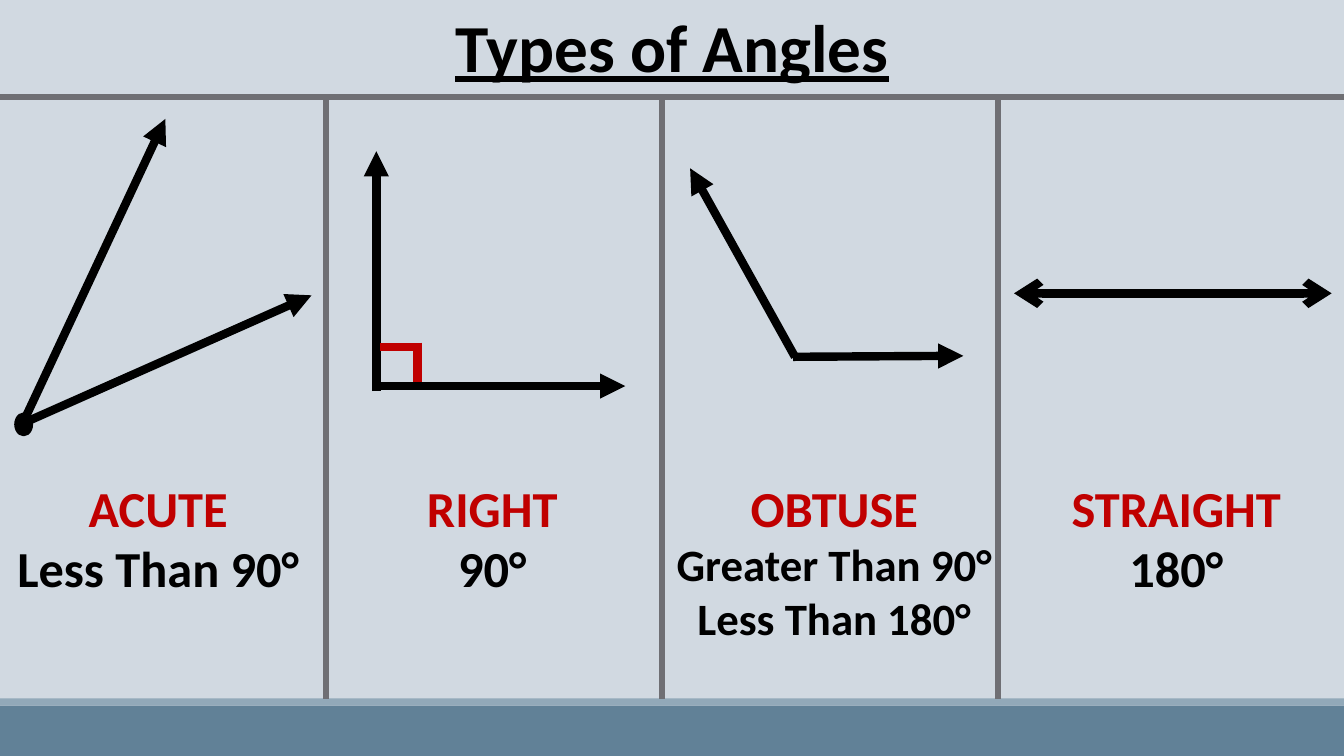
from lxml import etree
from pptx import Presentation
from pptx.dml.color import RGBColor
from pptx.enum.shapes import MSO_CONNECTOR, MSO_SHAPE
from pptx.enum.text import PP_ALIGN
from pptx.oxml.ns import qn
from pptx.util import Inches, Pt

RECT, OVAL = MSO_SHAPE.RECTANGLE, MSO_SHAPE.OVAL
STRAIGHT = MSO_CONNECTOR.STRAIGHT
CENTER = PP_ALIGN.CENTER

BACKGROUND = RGBColor(0xD1, 0xD9, 0xE1)
FOOTER = RGBColor(0x61, 0x81, 0x97)
FOOTER_EDGE = RGBColor(0x92, 0xA9, 0xB9)
GRAY = RGBColor(0x6F, 0x6F, 0x74)
BLACK = RGBColor(0, 0, 0)
RED = RGBColor(0xC0, 0, 0)

FONT = "Calibri"
W, H = 13.33, 7.5
HEADER_Y, EDGE_Y, FOOTER_Y = 0.96, 6.93, 7.0
CAPTION_Y = 4.68
# Left edge of each column: quarters of the slide, nudged left
COLUMNS = [0] + [W * i / 4 - 0.1 for i in (1, 2, 3)]

# Per column: caption centre and width, name, size in degrees, its font size
CAPTIONS = [
    (1.57, 3.04, 1.31, "ACUTE", "Less Than 90°", 36),
    (1.65, 1.81, 1.31, "RIGHT", "90°", 36),
    (1.71, 3.66, 1.78, "OBTUSE", "Greater Than 90° Less Than 180°", 32),
    (1.77, 2.57, 1.31, "STRAIGHT", "180°", 36),
]
# Column, start and end measured from the column's left edge
RAYS = [
    (0, (0.23, 4.19), (1.64, 1.18)),
    (0, (0.25, 4.19), (3.09, 2.93)),
    (1, (0.5, 3.83), (2.97, 3.83)),
    (1, (0.5, 3.88), (0.5, 1.5)),
    (2, (1.32, 3.54), (0.28, 1.67)),
    (2, (1.3, 3.54), (2.99, 3.53)),
]
RIGHT_ANGLE_MARK = [
    (1, (0.54, 3.44), (0.95, 3.44)),
    (1, (0.91, 3.4), (0.91, 3.79)),
]


def add_shape(s, kind, x, y, w, h, color):
    sp = s.shapes.add_shape(kind, Inches(x), Inches(y), Inches(w), Inches(h))
    sp.shadow.inherit = False
    sp.fill.solid()
    sp.fill.fore_color.rgb = color
    sp.line.fill.background()
    return sp


def add_line(s, start, end, color, width, head=None, tail=None):
    """Draw a line; head and tail name the arrowheads at start and end."""
    points = [Inches(v) for v in (*start, *end)]
    line = s.shapes.add_connector(STRAIGHT, *points)
    line.line.color.rgb = color
    line.line.width = Pt(width)
    ln = line.line._get_or_add_ln()
    for tag, kind in (("a:headEnd", head), ("a:tailEnd", tail)):
        if kind:
            etree.SubElement(ln, qn(tag)).set("type", kind)
    etree.SubElement(line._element.spPr, qn("a:effectLst"))


def add_column_line(s, column, start, end, color=BLACK, **arrows):
    left = COLUMNS[column]
    add_line(s, (left + start[0], start[1]), (left + end[0], end[1]),
             color, 6, **arrows)


def add_text(s, x, y, w, h, lines):
    """Add centred bold paragraphs from (text, size, color) and return them."""
    box = s.shapes.add_textbox(Inches(x), Inches(y), Inches(w), Inches(h))
    tf = box.text_frame
    tf.word_wrap = True
    for i, (text, size, color) in enumerate(lines):
        p = tf.paragraphs[0] if i == 0 else tf.add_paragraph()
        p.text = text
        p.alignment = CENTER
        font = p.runs[0].font
        font.name, font.size, font.bold = FONT, Pt(size), True
        font.color.rgb = color
    return tf.paragraphs


def add_frame(s):
    s.background.fill.solid()
    s.background.fill.fore_color.rgb = BACKGROUND
    add_shape(s, RECT, 0, FOOTER_Y, W, H - FOOTER_Y, FOOTER)
    add_shape(s, RECT, 0, EDGE_Y, W, FOOTER_Y - EDGE_Y, FOOTER_EDGE)
    title = add_text(s, 0, 0, W, 1.09, [("Types of Angles", 48, BLACK)])
    title[0].runs[0].font.underline = True
    add_line(s, (0, HEADER_Y), (W, HEADER_Y), GRAY, 4.5)
    for x in COLUMNS[1:]:
        add_line(s, (x, HEADER_Y), (x, EDGE_Y), GRAY, 4.5)


def add_angles(s):
    for ray in RAYS:
        add_column_line(s, *ray, tail="triangle")
    for side in RIGHT_ANGLE_MARK:
        add_column_line(s, *side, color=RED)
    add_column_line(s, 3, (0.16, 2.91), (3.31, 2.91),
                    head="arrow", tail="arrow")
    vertex = add_shape(s, OVAL, 0.15, 4.1, 0.17, 0.22, BLACK)
    vertex.line.color.rgb = BLACK
    vertex.line.width = Pt(1.25)


def add_captions(s):
    for left, (center, w, h, name, degrees, size) in zip(COLUMNS, CAPTIONS):
        add_text(s, left + center - w / 2, CAPTION_Y, w, h,
                 [(name, 36, RED), (degrees, size, BLACK)])


def main():
    prs = Presentation()
    prs.slide_width, prs.slide_height = Inches(W), Inches(H)
    s = prs.slides.add_slide(prs.slide_layouts[6])
    add_frame(s)
    add_angles(s)
    add_captions(s)
    prs.save("out.pptx")


if __name__ == "__main__":
    main()
